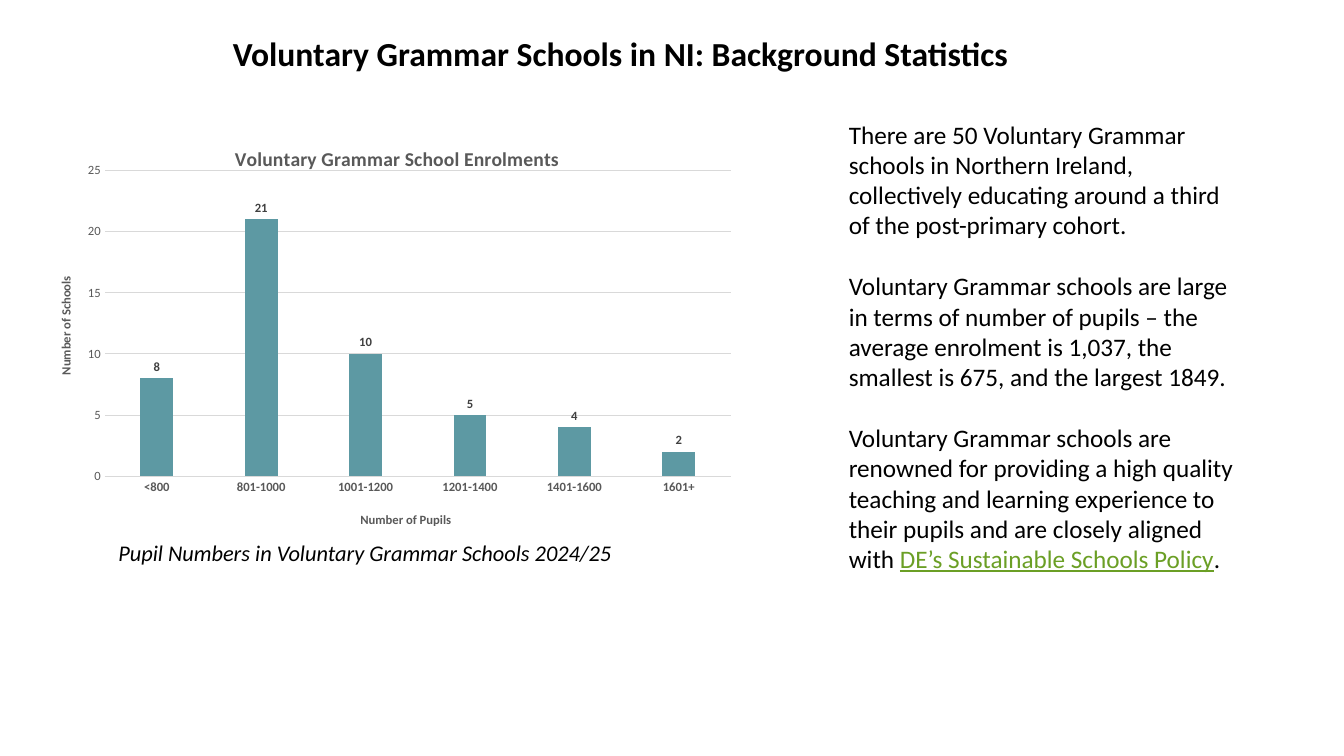
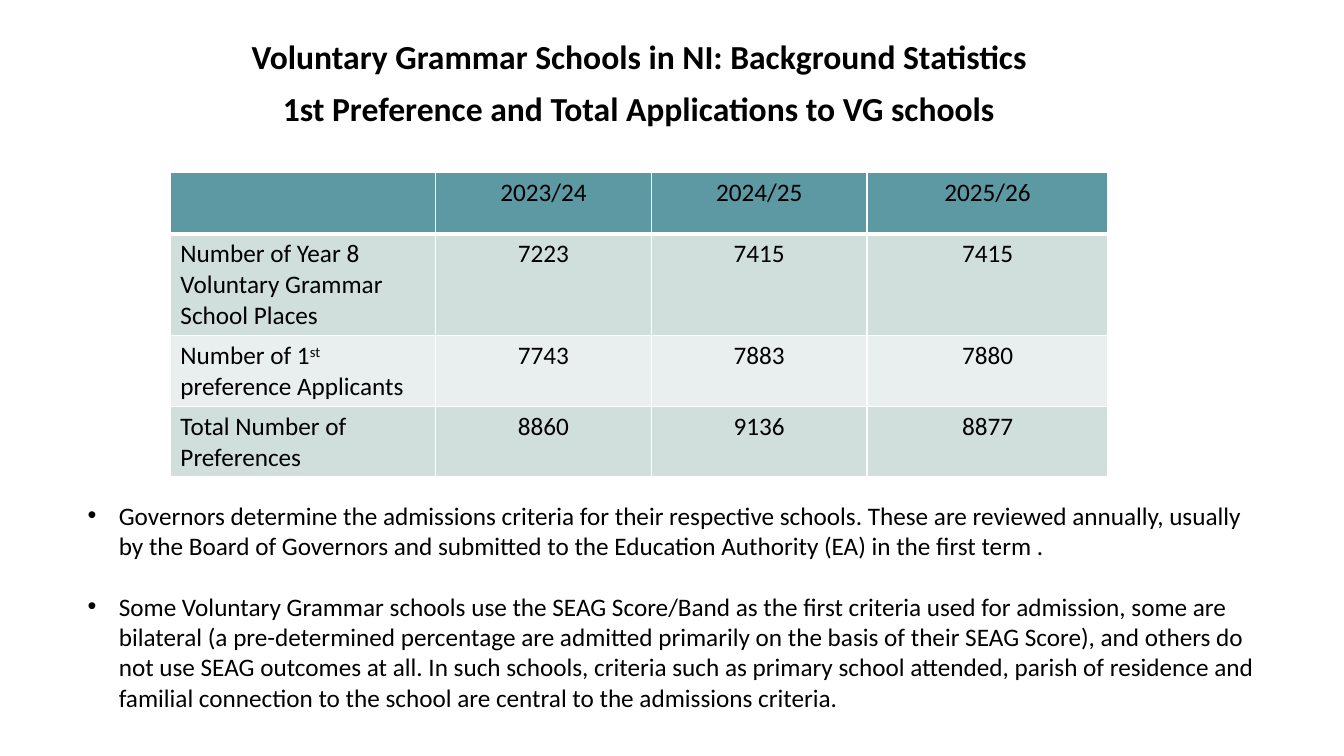
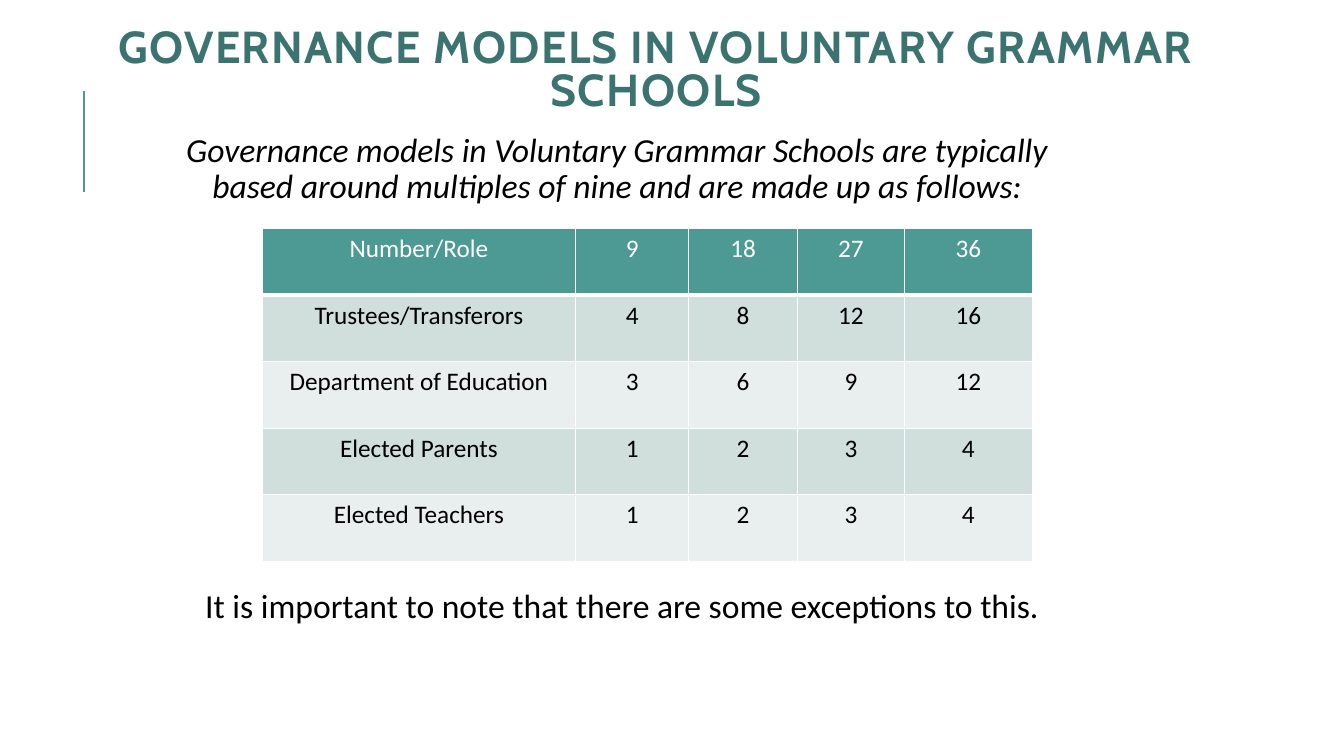
from lxml import etree
from pptx import Presentation
from pptx import util as u
from pptx.chart.data import CategoryChartData
from pptx.dml.color import RGBColor
from pptx.enum import chart as ch
from pptx.enum import shapes, text
from pptx.oxml import ns

BLACK, WHITE = "000000", "FFFFFF"
TEAL, STEEL, DEEP_TEAL = "4D9994", "5D99A3", "3A736F"
BANDS = ["D0DEDC", "E9EFEE"]
GREY, GRID, LABEL, LINK = "595959", "D9D9D9", "404040", "6B9F25"
BODY, HEADING = "Calibri", "Cabin"
LEFT, CENTER = text.PP_ALIGN.LEFT, text.PP_ALIGN.CENTER
TOP, MIDDLE = text.MSO_ANCHOR.TOP, text.MSO_ANCHOR.MIDDLE
BLANK_LINE = 22  # points, one line of 18 pt text


def rgb(value):
    return RGBColor.from_string(value)


def inches(values):
    return [u.Inches(v) for v in values]


def style_font(font, size, color=BLACK, name=BODY, bold=False, italic=False):
    font.size, font.name = u.Pt(size), name
    font.bold, font.italic = bold, italic
    font.color.rgb = rgb(color)


def set_layout(parent, **values):
    """Place a chart part by fractions of the chart area."""
    old = parent.find(ns.qn("c:layout"))
    if old is not None:
        parent.remove(old)
    layout = etree.Element(ns.qn("c:layout"))
    manual = etree.SubElement(layout, ns.qn("c:manualLayout"))
    for tag, value in values.items():
        etree.SubElement(manual, ns.qn("c:" + tag)).set("val", str(value))
    first = parent.find(ns.qn("c:tx"))
    parent.insert(0 if first is None else 1, layout)


def border(cell, side, width):
    props = cell._tc.get_or_add_tcPr()
    line = etree.Element(ns.qn("a:ln" + side), w=str(u.Pt(width)))
    fill = etree.SubElement(line, ns.qn("a:solidFill"))
    etree.SubElement(fill, ns.qn("a:srgbClr")).set("val", WHITE)
    props.insert("LRTB".index(side), line)


class Deck:
    def __init__(self):
        self.file = Presentation()
        self.file.slide_width, self.file.slide_height = inches((13.33, 7.5))
        self.slide = None

    def add_text(self, frame, paragraphs, size=18, align=LEFT, spacing=None,
                 gap=0, bullet=False, **style):
        """Each paragraph is a string or a list of (text, run options)."""
        for i, parts in enumerate(paragraphs):
            para = frame.paragraphs[0] if i == 0 else frame.add_paragraph()
            if isinstance(parts, str):
                parts = [(parts, {})]
            for words, options in parts:
                run = para.add_run()
                run.text = words
                style_font(run.font, size, **{**style, **options.get("font", {})})
                if "underline" in options:
                    run.font.underline = True
                for key, value in options.get("attributes", {}).items():
                    run._r.get_or_add_rPr().set(key, value)
            if bullet:
                props = para._p.get_or_add_pPr()
                props.set("marL", str(u.Inches(0.31)))
                props.set("indent", str(u.Inches(-0.31)))
                etree.SubElement(props, ns.qn("a:buFont")).set("typeface", "Arial")
                etree.SubElement(props, ns.qn("a:buChar")).set("char", "•")
            para.alignment = align
            if spacing:
                para.line_spacing = spacing
            para.space_before = u.Pt(gap if i else 0)

    def new_slide(self, title, at, anchor=TOP, size=24, **style):
        self.slide = self.file.slides.add_slide(self.file.slide_layouts[5])
        holder = self.slide.shapes.title
        holder.left, holder.top, holder.width, holder.height = inches(at)
        frame = holder.text_frame
        frame.word_wrap, frame.auto_size = True, text.MSO_AUTO_SIZE.NONE
        frame.vertical_anchor = anchor
        self.add_text(frame, [title], size, CENTER, bold=True, **style)

    def text_box(self, at, paragraphs, **style):
        frame = self.slide.shapes.add_textbox(*inches(at)).text_frame
        frame.word_wrap = True
        self.add_text(frame, paragraphs, **style)

    def rule(self, start, end, color, width):
        line = self.slide.shapes.add_connector(
            shapes.MSO_CONNECTOR.STRAIGHT, *inches(start + end))
        line.line.color.rgb, line.line.width = rgb(color), u.Pt(width)
        etree.SubElement(line._element.spPr, ns.qn("a:effectLst"))

    def table(self, at, widths, heights, rows, header_fill, header_color,
              first_align):
        size = (sum(widths), sum(heights))
        table = self.slide.shapes.add_table(
            len(rows), len(widths), *inches(at + size)).table
        table.first_row = table.horz_banding = False
        for column, width in zip(table.columns, widths):
            column.width = u.Inches(width)
        for r, (row, height) in enumerate(zip(rows, heights)):
            table.rows[r].height = u.Inches(height)
            for c, content in enumerate(row):
                cell = table.cell(r, c)
                cell.fill.solid()
                cell.fill.fore_color.rgb = rgb(BANDS[(r - 1) % 2] if r else header_fill)
                for side in "LRTB":
                    border(cell, side, 3 if side == "B" and r == 0 else 1)
                if content:
                    self.add_text(cell.text_frame, [content],
                                  align=CENTER if c else first_align,
                                  color=BLACK if r else header_color)

    def chart_title(self, title, words, size, x, y):
        title.text_frame.text = words
        style_font(title.text_frame.paragraphs[0].runs[0].font, size, GREY, bold=True)
        set_layout(title._element, xMode="edge", yMode="edge", x=x, y=y)

    def column_chart(self, at, categories, values):
        data = CategoryChartData()
        data.categories = categories
        data.add_series("Series 1", values)
        chart = self.slide.shapes.add_chart(
            ch.XL_CHART_TYPE.COLUMN_CLUSTERED, *inches(at), data).chart
        style_font(chart.font, 10)
        chart.has_legend = False
        set_layout(chart._chartSpace.chart.plotArea, layoutTarget="inner",
                   xMode="edge", yMode="edge", x=0.09, y=0.12, w=0.89, h=0.74)

        # Columns and their labels
        plot = chart.plots[0]
        plot.gap_width, plot.overlap, plot.vary_by_categories = 219, -27, False
        fill = plot.series[0].format.fill
        fill.solid()
        fill.fore_color.rgb = rgb(STEEL)
        plot.has_data_labels = True
        labels = plot.data_labels
        labels.show_value = True
        labels.position = ch.XL_LABEL_POSITION.OUTSIDE_END
        style_font(labels.font, 9, LABEL, bold=True)

        # Axes
        pupils, schools = chart.category_axis, chart.value_axis
        for axis in (pupils, schools):
            axis.major_tick_mark = axis.minor_tick_mark = ch.XL_TICK_MARK.NONE
            style_font(axis.tick_labels.font, 9, GREY, bold=axis is pupils)
        schools.minimum_scale, schools.maximum_scale, schools.major_unit = 0, 25, 5
        schools.format.line.fill.background()
        for line in (pupils.format.line, schools.major_gridlines.format.line):
            line.color.rgb, line.width = rgb(GRID), u.Pt(0.75)

        # Titles
        self.chart_title(chart.chart_title, "Voluntary Grammar School Enrolments",
                         14, 0.27, 0.05)
        self.chart_title(pupils.axis_title, "Number of Pupils", 9, 0.45, 0.94)
        self.chart_title(schools.axis_title, "Number of Schools", 9, 0.02, 0.37)
        upright = schools.axis_title.text_frame._txBody.bodyPr
        upright.set("rot", "-5400000")
        upright.set("vert", "horz")


def main():
    deck = Deck()
    statistics = "Voluntary Grammar Schools in NI: Background Statistics"

    # Enrolments
    deck.new_slide(statistics, (1.98, 0.08, 8.35, 0.64), spacing=1.5)
    deck.column_chart(
        (0.41, 1.2, 6.98, 4.1),
        ["<800", "801-1000", "1001-1200", "1201-1400", "1401-1600", "1601+"],
        [8, 21, 10, 5, 4, 2])
    deck.text_box((-0.34, 5.3, 7.92, 0.37),
                  ["Pupil Numbers in Voluntary Grammar Schools 2024/25"],
                  size=16, align=CENTER, italic=True)
    deck.text_box((8.32, 1.13, 4.14, 4.64), [
        "There are 50 Voluntary Grammar schools in Northern Ireland, collectively "
        "educating around a third of the post-primary cohort.",
        "Voluntary Grammar schools are large in terms of number of pupils – the "
        "average enrolment is 1,037, the smallest is 675, and the largest 1849.",
        [("Voluntary Grammar schools are renowned for providing a high quality "
          "teaching and learning experience to their pupils and are closely "
          "aligned with ", {}),
         ("DE’s Sustainable Schools Policy",
          {"font": {"color": LINK}, "underline": True}),
         (".", {})],
    ], gap=BLANK_LINE)

    # Applications
    deck.new_slide(statistics, (1.96, 0.31, 8.76, 0.5))
    deck.text_box((1.99, 0.82, 8.69, 0.5),
                  ["1st Preference and Total Applications to VG schools"],
                  size=24, align=CENTER, bold=True)
    first_preference = [("Number of 1", {}),
                        ("st", {"attributes": {"baseline": "30000"}}),
                        (" preference Applicants", {})]
    deck.table((1.69, 1.71), (2.63, 2.14, 2.14, 2.39), (0.61, 1.01, 0.7, 0.7), [
        ("", "2023/24", "2024/25", "2025/26"),
        ("Number of Year 8 Voluntary Grammar School Places", "7223", "7415", "7415"),
        (first_preference, "7743", "7883", "7880"),
        ("Total Number of Preferences", "8860", "9136", "8877"),
    ], STEEL, BLACK, LEFT)
    deck.text_box((0.77, 4.91, 11.79, 2.22), [
        "Governors determine the admissions criteria for their respective schools. "
        "These are reviewed annually, usually by the Board of Governors and "
        "submitted to the Education Authority (EA) in the first term .",
        "Some Voluntary Grammar schools use the SEAG Score/Band as the first "
        "criteria used for admission, some are bilateral (a pre-determined "
        "percentage are admitted primarily on the basis of their SEAG Score), and "
        "others do not use SEAG outcomes at all. In such schools, criteria such as "
        "primary school attended, parish of residence and familial connection to "
        "the school are central to the admissions criteria.",
    ], gap=BLANK_LINE, bullet=True)

    # Governance
    heading = [("GOVERNANCE MODELS IN VOLUNTARY GRAMMAR SCHOOLS",
                {"attributes": {"spc": "100"}})]
    deck.new_slide(heading, (0.25, 0.1, 12.52, 1.24), MIDDLE, 32,
                   spacing=0.8, color=DEEP_TEAL, name=HEADING)
    deck.rule((0.83, 0.9), (0.83, 1.9), TEAL, 1.5)
    deck.text_box((1.42, 1.27, 9.4, 0.85), [
        "Governance models in Voluntary Grammar Schools are typically based around "
        "multiples of nine and are made up as follows:",
    ], size=24, align=CENTER, spacing=0.9, italic=True)
    roles = [("Trustees/Transferors", 4), ("Department of Education", 3),
             ("Elected Parents", 1), ("Elected Teachers", 1)]
    multiples = range(1, 5)
    deck.table((2.6, 2.27), (3.11, 1.12, 1.08, 1.06, 1.27), (0.66,) * 5,
               [[role] + [str(share * m) for m in multiples]
                for role, share in [("Number/Role", 9)] + roles],
               TEAL, WHITE, CENTER)
    deck.text_box((1.47, 5.8, 9.4, 0.5),
                  ["It is important to note that there are some exceptions to this."],
                  size=24, align=CENTER, spacing=0.9)

    deck.file.save("out.pptx")


if __name__ == "__main__":
    main()
